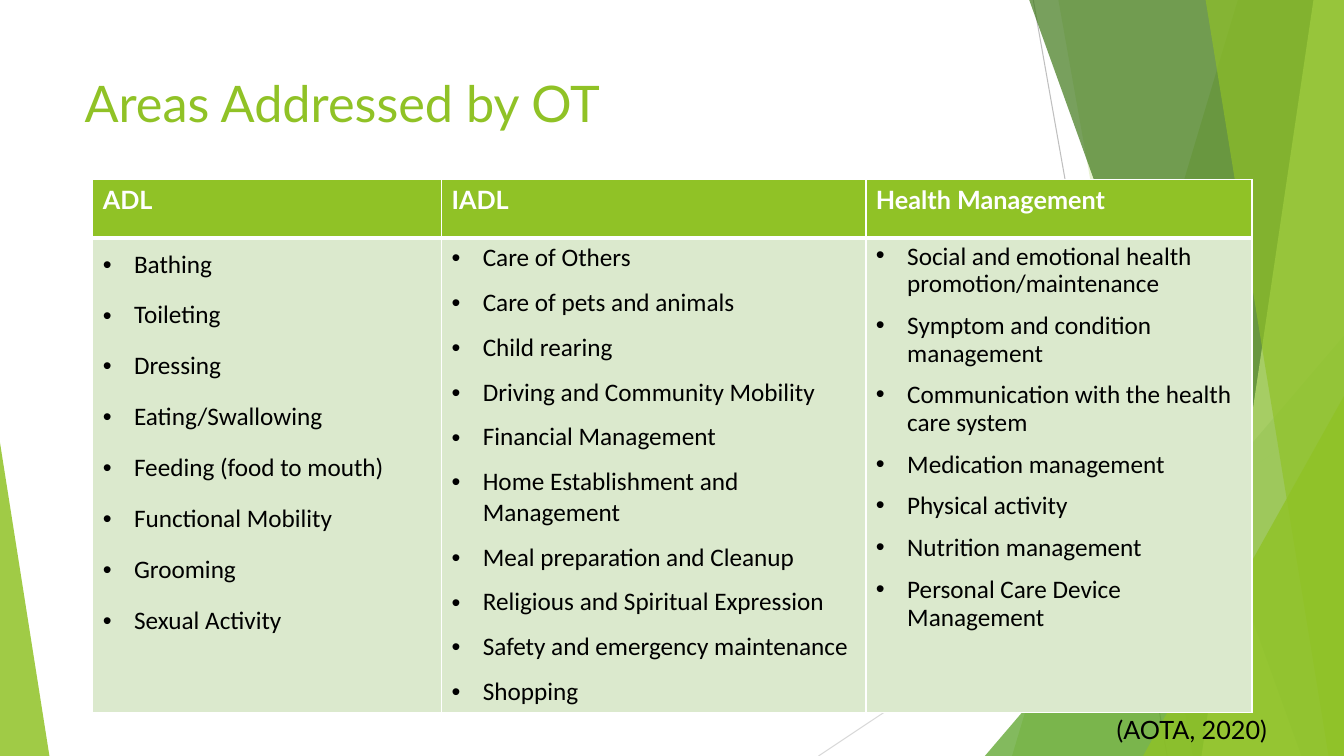
import pptx
import pptx.dml.color
import pptx.enum.shapes
import pptx.enum.text
import pptx.oxml
import pptx.oxml.ns
import pptx.util

WIDTH = pptx.util.Inches(13.33)
HEIGHT = pptx.util.Inches(7.5)
TITLE_ONLY = 5

COLORS = {
    "lime": "90C226",
    "green": "54A021",
    "forest": "3F7819",
    "pale lime": "C0E474",
    "mint": "DBE9CD",
    "white": "FFFFFF",
    "black": "000000",
    "gray": "BFBFBF",
    "light gray": "D9D9D9",
}

# Heading, line spacing and items of each table column
AREAS = [
    ("ADL", 1.2, [
        "Bathing", "Toileting", "Dressing", "Eating/Swallowing",
        "Feeding (food to mouth)", "Functional Mobility", "Grooming",
        "Sexual Activity",
    ]),
    ("IADL", 1.0, [
        "Care of Others", "Care of pets and animals", "Child rearing",
        "Driving and Community Mobility", "Financial Management",
        "Home Establishment and Management", "Meal preparation and Cleanup",
        "Religious and Spiritual Expression",
        "Safety and emergency maintenance", "Shopping",
    ]),
    ("Health Management", 0.9, [
        "Social and emotional health promotion/maintenance",
        "Symptom and condition management",
        "Communication with the health care system",
        "Medication management", "Physical activity", "Nutrition management",
        "Personal Care Device Management",
    ]),
]


def across(percent):
    return round(WIDTH * percent / 100)


def down(percent):
    return round(HEIGHT * percent / 100)


def box(left, top, width, height):
    return across(left), down(top), across(width), down(height)


def color(name):
    return pptx.dml.color.RGBColor.from_string(COLORS[name])


def add_xml(parent, tag, content="", **attributes):
    namespace = pptx.oxml.ns.nsdecls("a")
    values = "".join(f' {key}="{value}"' for key, value in attributes.items())
    element = pptx.oxml.parse_xml(f"<a:{tag} {namespace}{values}>{content}</a:{tag}>")
    parent.append(element)
    return element


def add_text(paragraph, text, size, font, color_name, bold=False):
    run = paragraph.add_run()
    run.text = text
    run.font.size = pptx.util.Pt(size)
    run.font.name = font
    run.font.bold = bold
    run.font.color.rgb = color(color_name)


def paint(shape, color_name, opacity):
    shape.shadow.inherit = False
    shape.line.fill.background()
    shape.fill.solid()
    shape.fill.fore_color.rgb = color(color_name)
    tint = shape.fill._xPr.find(".//" + pptx.oxml.ns.qn("a:srgbClr"))
    add_xml(tint, "alpha", val=opacity * 1000)


def add_hairline(slide, start, end, color_name):
    line = slide.shapes.add_connector(
        pptx.enum.shapes.MSO_CONNECTOR.STRAIGHT,
        across(start[0]), down(start[1]), across(end[0]), down(end[1]))
    line.line.color.rgb = color(color_name)
    line.line.width = pptx.util.Pt(0.75)
    add_xml(line._element.spPr, "effectLst")


def add_facet(slide, top_left, bottom_left, color_name, opacity):
    builder = slide.shapes.build_freeform(across(top_left), 0)
    builder.add_line_segments(
        [(WIDTH, 0), (WIDTH, HEIGHT), (across(bottom_left), HEIGHT)], close=True)
    paint(builder.convert_to_shape(), color_name, opacity)


def add_triangle(slide, left, top, width, apex, color_name, opacity):
    triangle = slide.shapes.add_shape(
        pptx.enum.shapes.MSO_SHAPE.ISOSCELES_TRIANGLE,
        *box(left, top, width, 100 - top))
    triangle.adjustments[0] = apex
    paint(triangle, color_name, opacity)


def add_decoration(slide):
    add_hairline(slide, (76.88, 0), (86.85, 100), "gray")
    add_hairline(slide, (100, 53.73), (60.9, 100), "light gray")
    add_facet(slide, 92.1, 75.3, "lime", 30)
    add_facet(slide, 78.75, 88.73, "lime", 20)
    add_triangle(slide, 73.28, 44.4, 26.72, 1, "green", 72)
    add_facet(slide, 76.58, 96.83, "forest", 70)
    add_facet(slide, 97.73, 89.4, "pale lime", 70)
    add_facet(slide, 89.7, 98.85, "lime", 65)
    add_triangle(slide, 85.05, 52.4, 14.95, 1, "lime", 80)
    add_triangle(slide, 0, 58.53, 3.68, 0, "lime", 85)


def add_title(slide, text):
    title = slide.shapes.title
    title.left, title.top, title.width, title.height = box(5.55, 8.93, 42.53, 13.47)
    title.text_frame.word_wrap = True
    title.text_frame.vertical_anchor = pptx.enum.text.MSO_ANCHOR.TOP
    paragraph = title.text_frame.paragraphs[0]
    paragraph.alignment = pptx.enum.text.PP_ALIGN.LEFT
    add_text(paragraph, text, 36, "Lato", "lime")


def format_cell(cell, fill_name, top_width, bottom_width):
    properties = cell._tc.get_or_add_tcPr()
    white = f'<a:solidFill><a:srgbClr val="{COLORS["white"]}"/></a:solidFill>'
    widths = {"lnL": 1, "lnR": 1, "lnT": top_width, "lnB": bottom_width}
    for side, width in widths.items():
        add_xml(properties, side, white, w=pptx.util.Pt(width))
    cell.fill.solid()
    cell.fill.fore_color.rgb = color(fill_name)


def add_bullets(text_frame, items, line_spacing):
    indent = pptx.util.Inches(0.31)
    for index, item in enumerate(items):
        paragraph = text_frame.add_paragraph() if index else text_frame.paragraphs[0]
        paragraph.line_spacing = line_spacing
        paragraph.space_before = pptx.util.Pt(10)
        properties = paragraph._p.get_or_add_pPr()
        properties.set("marL", str(indent))
        properties.set("indent", str(-indent))
        add_xml(properties, "buFont", typeface="Arial")
        add_xml(properties, "buChar", char="•")
        add_text(paragraph, item, 18, "Calibri", "black")


def add_area_table(slide):
    column_widths = [25.95, 31.58, 28.73]
    row_heights = [7.73, 62]
    table = slide.shapes.add_table(
        len(row_heights), len(column_widths),
        *box(6.9, 23.73, sum(column_widths), sum(row_heights))).table
    for row, height in zip(table.rows, row_heights):
        row.height = down(height)
    for index, (heading, line_spacing, items) in enumerate(AREAS):
        table.columns[index].width = across(column_widths[index])
        header, body = table.cell(0, index), table.cell(1, index)
        format_cell(header, "lime", 1, 3)
        format_cell(body, "mint", 3, 1)
        add_text(header.text_frame.paragraphs[0], heading, 18, "Lato", "white", True)
        add_bullets(body.text_frame, items, line_spacing)


def add_citation(slide, text):
    citation = slide.shapes.add_textbox(*box(82.35, 93.87, 22.5, 5.33))
    citation.text_frame.word_wrap = True
    add_text(citation.text_frame.paragraphs[0], text, 18, "Lato", "black")


def main():
    presentation = pptx.Presentation()
    presentation.slide_width, presentation.slide_height = WIDTH, HEIGHT
    slide = presentation.slides.add_slide(presentation.slide_layouts[TITLE_ONLY])
    add_decoration(slide)
    add_title(slide, "Areas Addressed by OT")
    add_area_table(slide)
    add_citation(slide, "(AOTA, 2020)")
    presentation.save("out.pptx")


if __name__ == "__main__":
    main()
